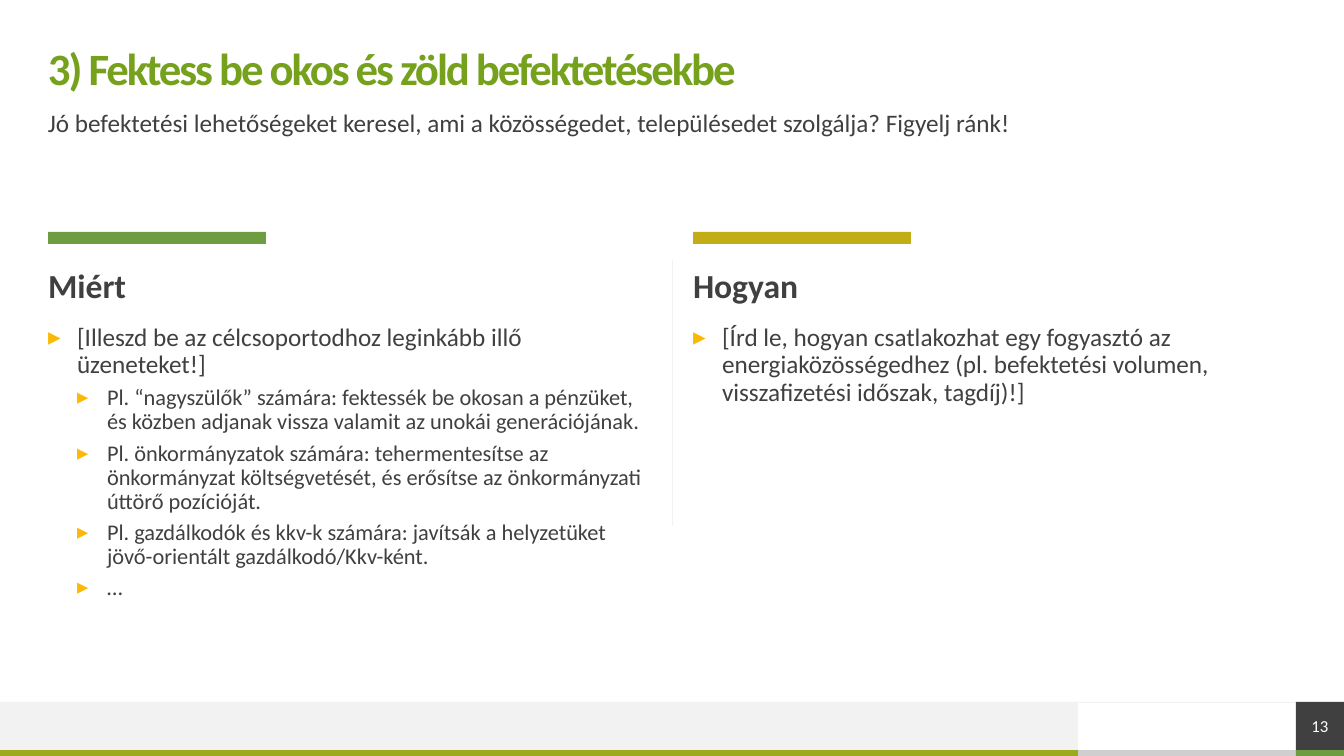
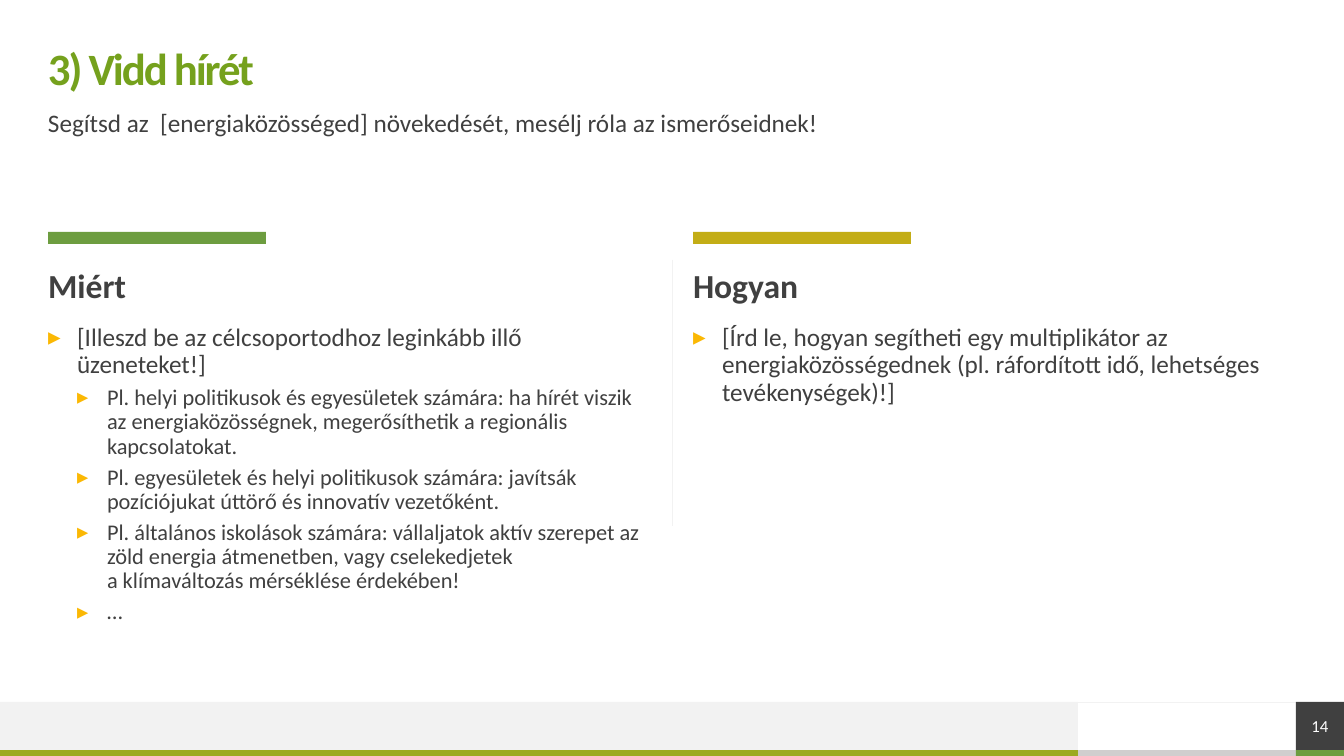
from lxml import etree
from pptx import Presentation
from pptx.dml.color import RGBColor
from pptx.enum.shapes import MSO_CONNECTOR, MSO_SHAPE
from pptx.enum.text import MSO_ANCHOR, PP_ALIGN
from pptx.oxml.ns import qn
from pptx.util import Pt

RECTANGLE = MSO_SHAPE.RECTANGLE
STRAIGHT = MSO_CONNECTOR.STRAIGHT
TOP = MSO_ANCHOR.TOP
MIDDLE = MSO_ANCHOR.MIDDLE
CENTER = PP_ALIGN.CENTER

SLIDE_WIDTH, SLIDE_HEIGHT = 1344, 756
EMU_PER_PX = 12192000 / SLIDE_WIDTH
FONT = "Calibri"
COLORS = {
    "title": "75A11D",
    "text": "404040",
    "bullet": "FBB804",
    "green": "6D9D40",
    "gold": "C3AD16",
    "olive": "9CAA20",
    "pale": "F2F2F2",
    "silver": "D0CECE",
    "white": "FFFFFF",
}

MARGIN = 48
CONTENT_WIDTH = SLIDE_WIDTH - 2 * MARGIN
COLUMN_WIDTH = 603
COLUMN_LEFTS = (MARGIN, SLIDE_WIDTH - MARGIN - COLUMN_WIDTH)
COLUMN_HEADINGS = (("Miért", "green"), ("Hogyan", "gold"))
ACCENT_WIDTH = 218
FOOTER_TOP, STRIPE_TOP = 702, 750
FOOTER_HEIGHT = STRIPE_TOP - FOOTER_TOP
STRIPE_HEIGHT = SLIDE_HEIGHT - STRIPE_TOP
NUMBER_LEFT = SLIDE_WIDTH - MARGIN
SILVER_LEFT = NUMBER_LEFT - ACCENT_WIDTH

LEVELS = (
    {"indent": 29, "hang": 29, "size": 18, "before": 10},
    {"indent": 59, "hang": 30, "size": 16, "before": 5},
)

SLIDES = (
    {
        "number": 13,
        "title": "3) Fektess be okos és zöld befektetésekbe",
        "subtitle": "Jó befektetési lehetőségeket keresel, ami a közösségedet, "
                    "településedet szolgálja? Figyelj ránk!",
        "columns": (
            (
                (0, "[Illeszd be az célcsoportodhoz leginkább illő üzeneteket!]"),
                (1, "Pl. “nagyszülők” számára: fektessék be okosan a pénzüket, "
                    "és közben adjanak vissza valamit az unokái generációjának."),
                (1, "Pl. önkormányzatok számára: tehermentesítse az önkormányzat "
                    "költségvetését, és erősítse az önkormányzati úttörő pozícióját."),
                (1, "Pl. gazdálkodók és kkv-k számára: javítsák a helyzetüket "
                    "jövő-orientált gazdálkodó/Kkv-ként."),
                (1, "…"),
            ),
            (
                (0, "[Írd le, hogyan csatlakozhat egy fogyasztó az "
                    "energiaközösségedhez (pl. befektetési volumen, "
                    "visszafizetési időszak, tagdíj)!]"),
            ),
        ),
    },
    {
        "number": 14,
        "title": "3) Vidd hírét",
        "subtitle": "Segítsd az  [energiaközösséged] növekedését, "
                    "mesélj róla az ismerőseidnek!",
        "columns": (
            (
                (0, "[Illeszd be az célcsoportodhoz leginkább illő üzeneteket!]"),
                (1, "Pl. helyi politikusok és egyesületek számára: ha hírét viszik "
                    "az energiaközösségnek, megerősíthetik a regionális kapcsolatokat."),
                (1, "Pl. egyesületek és helyi politikusok számára: javítsák "
                    "pozíciójukat úttörő és innovatív vezetőként."),
                (1, "Pl. általános iskolások számára: vállaljatok aktív szerepet az "
                    "zöld energia átmenetben, vagy cselekedjetek\n"
                    "a klímaváltozás mérséklése érdekében!"),
                (1, "…"),
            ),
            (
                (0, "[Írd le, hogyan segítheti egy multiplikátor az "
                    "energiaközösségednek (pl. ráfordított idő, lehetséges "
                    "tevékenységek)!]"),
            ),
        ),
    },
)


def px(length):
    return round(length * EMU_PER_PX)


def rgb(color):
    return RGBColor.from_string(COLORS[color])


def add_rectangle(slide, left, top, width, height, color):
    shape = slide.shapes.add_shape(RECTANGLE, px(left), px(top), px(width), px(height))
    shape.shadow.inherit = False
    shape.fill.solid()
    shape.fill.fore_color.rgb = rgb(color)
    shape.line.fill.background()
    return shape


def add_line(slide, start_x, start_y, end_x, end_y):
    line = slide.shapes.add_connector(STRAIGHT, px(start_x), px(start_y), px(end_x), px(end_y))
    line.line.color.rgb = rgb("pale")
    line.line.width = Pt(0.5)
    etree.SubElement(line._element.spPr, qn("a:effectLst"))


def prepare_frame(shape, anchor):
    frame = shape.text_frame
    frame.word_wrap = True
    frame.vertical_anchor = anchor
    frame.margin_left = frame.margin_top = frame.margin_right = frame.margin_bottom = 0
    return frame


def add_frame(slide, left, top, width, height, anchor=TOP):
    box = slide.shapes.add_textbox(px(left), px(top), px(width), px(height))
    return prepare_frame(box, anchor)


def write(paragraph, text, size, color="text", bold=False, line_spacing=0.9):
    paragraph.text = text
    paragraph.line_spacing = line_spacing
    font = paragraph.font
    font.name = FONT
    font.size = Pt(size)
    font.bold = bold
    font.color.rgb = rgb(color)


def add_bullet(paragraph, level):
    paragraph.level = level
    properties = paragraph._p.get_or_add_pPr()
    properties.set("marL", str(px(LEVELS[level]["indent"])))
    properties.set("indent", str(-px(LEVELS[level]["hang"])))
    bullet_color = etree.SubElement(properties, qn("a:buClr"))
    etree.SubElement(bullet_color, qn("a:srgbClr"), val=COLORS["bullet"])
    etree.SubElement(properties, qn("a:buFont"), typeface=FONT)
    etree.SubElement(properties, qn("a:buChar"), char="▸")


def add_footer(slide, number):
    add_rectangle(slide, SILVER_LEFT, STRIPE_TOP, ACCENT_WIDTH, STRIPE_HEIGHT, "silver")
    add_rectangle(slide, 0, FOOTER_TOP, SILVER_LEFT, FOOTER_HEIGHT, "pale")
    add_rectangle(slide, 0, STRIPE_TOP, SILVER_LEFT, STRIPE_HEIGHT, "olive")
    add_rectangle(slide, NUMBER_LEFT, STRIPE_TOP, MARGIN, STRIPE_HEIGHT, "green")
    add_line(slide, SLIDE_WIDTH, FOOTER_TOP, 0, FOOTER_TOP)
    tile = add_rectangle(slide, NUMBER_LEFT, FOOTER_TOP, MARGIN, FOOTER_HEIGHT, "text")
    paragraph = prepare_frame(tile, MIDDLE).paragraphs[0]
    paragraph.alignment = CENTER
    write(paragraph, str(number), 12, "white", line_spacing=1.0)


def add_header(slide, title, subtitle):
    paragraph = add_frame(slide, MARGIN, 47, CONTENT_WIDTH, 48, MIDDLE).paragraphs[0]
    write(paragraph, title, 32, "title", bold=True)
    paragraph.runs[0]._r.get_or_add_rPr().set("spc", "-150")
    frame = add_frame(slide, MARGIN, 111, CONTENT_WIDTH, 39)
    write(frame.paragraphs[0], subtitle, 18)


def add_column(slide, left, heading, accent, items):
    add_rectangle(slide, left, 232, ACCENT_WIDTH, 12, accent)
    frame = add_frame(slide, left, 269, COLUMN_WIDTH, 39)
    write(frame.paragraphs[0], heading, 24, bold=True)
    frame = add_frame(slide, left, 325, COLUMN_WIDTH, 242)
    for index, (level, text) in enumerate(items):
        paragraph = frame.add_paragraph() if index else frame.paragraphs[0]
        add_bullet(paragraph, level)
        if index:
            paragraph.space_before = Pt(LEVELS[level]["before"])
        write(paragraph, text, LEVELS[level]["size"])


def main():
    presentation = Presentation()
    presentation.slide_width = px(SLIDE_WIDTH)
    presentation.slide_height = px(SLIDE_HEIGHT)
    blank_layout = presentation.slide_layouts[6]
    for content in SLIDES:
        slide = presentation.slides.add_slide(blank_layout)
        add_footer(slide, content["number"])
        add_header(slide, content["title"], content["subtitle"])
        for left, (heading, accent), items in zip(COLUMN_LEFTS, COLUMN_HEADINGS, content["columns"]):
            add_column(slide, left, heading, accent, items)
        add_line(slide, SLIDE_WIDTH // 2, 260, SLIDE_WIDTH // 2, 526)
    presentation.save("out.pptx")


if __name__ == "__main__":
    main()
